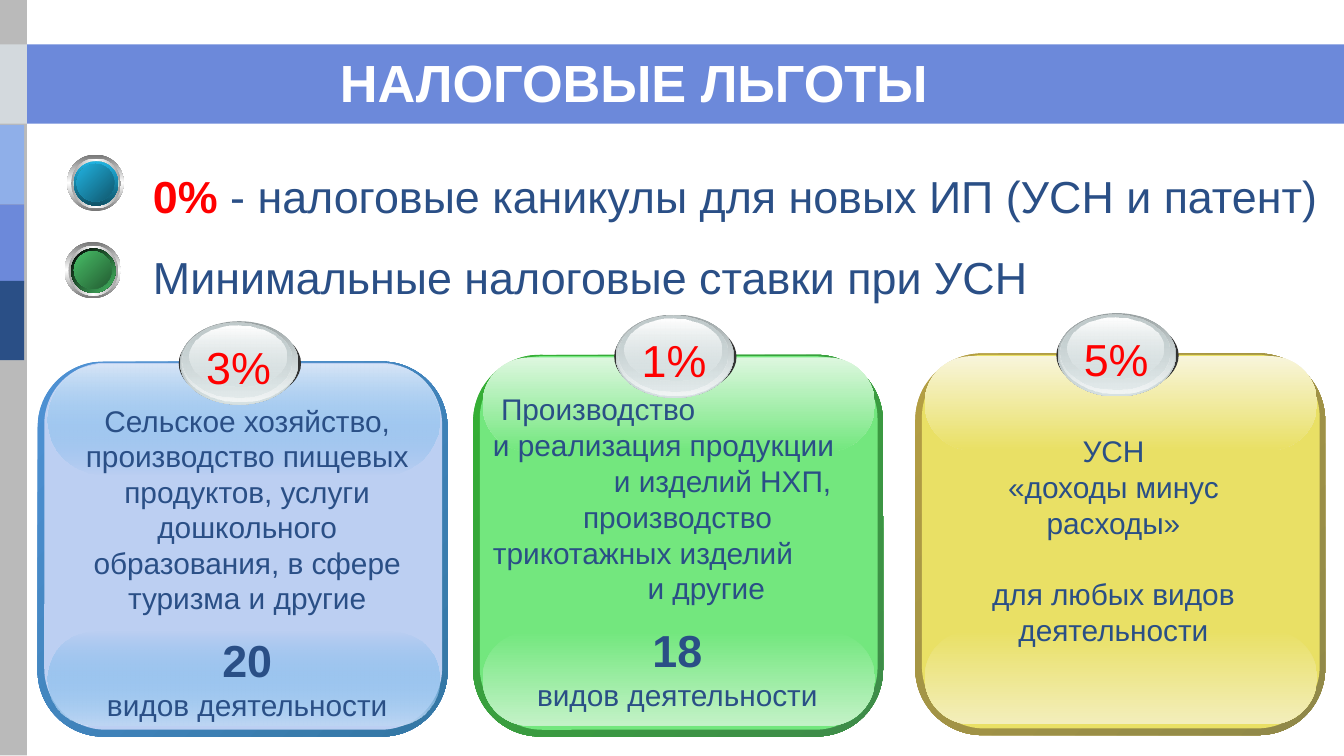
from lxml.etree import SubElement
from pptx import Presentation
from pptx.dml.color import RGBColor
from pptx.enum.shapes import MSO_SHAPE
from pptx.enum.text import MSO_ANCHOR, MSO_AUTO_SIZE, PP_ALIGN
from pptx.oxml.ns import qn
from pptx.util import Inches, Pt

NAVY, RED, WHITE = "2A4F86", "FF0000", "FFFFFF"
RECT, ROUND, OVAL = MSO_SHAPE.RECTANGLE, MSO_SHAPE.ROUNDED_RECTANGLE, MSO_SHAPE.OVAL

# 16:9 slide
prs = Presentation()
prs.slide_width, prs.slide_height = Inches(10), Inches(10 * 9 / 16)
slide = prs.slides.add_slide(prs.slide_layouts[5])


def add_filled(kind, x, y, w, h, colours, angle=90, corner=None):
    """Add a shape; colours holds one hex, or several as "hex" or "hex/opacity %"."""
    shape = slide.shapes.add_shape(kind, Inches(x), Inches(y), Inches(w), Inches(h))
    shape.shadow.inherit = False
    shape.line.fill.background()
    if corner is not None:
        shape.adjustments[0] = corner
    colours = colours.split()
    if len(colours) == 1:
        shape.fill.solid()
        shape.fill.fore_color.rgb = RGBColor.from_string(colours[0])
        return
    shape.fill.gradient()
    shape.fill.gradient_angle = (360 - angle) % 360
    stops = shape.element.spPr.find(qn("a:gradFill")).find(qn("a:gsLst"))
    for old_stop in list(stops):
        stops.remove(old_stop)
    for i, colour in enumerate(colours):
        value, _, opacity = colour.partition("/")
        stop = SubElement(stops, qn("a:gs"), pos=str(100000 * i // (len(colours) - 1)))
        tint = SubElement(stop, qn("a:srgbClr"), val=value)
        if opacity:
            SubElement(tint, qn("a:alpha"), val=str(int(opacity) * 1000))


def add_run(paragraph, text, size, colour=NAVY, bold=False):
    run = paragraph.add_run()
    run.text = text
    run.font.name, run.font.size, run.font.bold = "Arial", Pt(size), bold
    run.font.color.rgb = RGBColor.from_string(colour)


# Title band and left strip
add_filled(RECT, 0, 0.33, 10, 0.59, "6C89DA")
add_filled(RECT, -0.01, 0, 0.21, 5.62, "BABABA")
for x, y, colour in [(0, 0.33, "D3D9DD"), (-0.02, 0.93, "8FAFE9"),
                     (-0.02, 1.52, "6C89DA"), (-0.02, 2.09, NAVY)]:
    add_filled(RECT, x, y, 0.2, 0.59, colour)

# Title, brought in front of the band
title = slide.shapes.title
title.left, title.top, title.width, title.height = map(Inches, (0.34, 0.38, 8.75, 0.46))
title.text_frame.auto_size = MSO_AUTO_SIZE.NONE
title.text_frame.vertical_anchor = MSO_ANCHOR.MIDDLE
title.text_frame.paragraphs[0].alignment = PP_ALIGN.CENTER
add_run(title.text_frame.paragraphs[0], "НАЛОГОВЫЕ ЛЬГОТЫ", 28, WHITE, True)
slide.shapes._spTree.append(title.element)

# Two main points
points = slide.shapes.add_textbox(Inches(0.31), Inches(1.01), Inches(9.69), Inches(2.8)).text_frame
points.word_wrap = True
holidays, rates = points.paragraphs[0], points.add_paragraph()
for point in (holidays, rates):
    point.line_spacing = 1.5
    point._p.get_or_add_pPr().set("marL", str(Inches(0.73)))
add_run(holidays, "0% ", 24, RED, True)
add_run(holidays, "- налоговые каникулы для новых ИП (УСН и патент)", 24)
add_run(rates, "Минимальные налоговые ставки при УСН", 24)

# Round buttons beside the points: inset, size, colours, angle
rings = [(0, 0.42, "767676 FFFFFF 767676", 90),
         (0.03, 0.37, "A2A2A2 FFFFFF A2A2A2", 0),
         (0.05, 0.33, "FFFFFF 57ABA3 FFFFFF", 45)]
for x, y, rim, rim_angle, face in [(0.5, 1.15, "21B3E1 0F5368", 90, "21B3E1 10576D"),
                                   (0.48, 1.8, "000000 48BE67", 45, "48BE67 235C32")]:
    for inset, size, colours, angle in rings + [(0.05, 0.33, rim, rim_angle),
                                                (0.07, 0.28, "43837D 57ABA3 43837D", 315),
                                                (0.07, 0.28, face, 45)]:
        add_filled(OVAL, x + inset, y + inset, size, size, colours, angle)

# Rate cards: place, frame, body, lower and upper gloss, upper gloss height
cards = [
    (0.28, 2.69, 2.79, "4E91D4 3477A4", "BCCFF2", "3CA1E6/0 BDD6F3", "D7E5F7 3CA1E6/0", 0.82, "3%"),
    (3.52, 2.64, 2.84, "34B034 3F8B4A", "73E77E", "73E77E C3F2C7", "DDF7DF 73E77E", 0.7, "1%"),
    (6.81, 2.63, 2.84, "B59F43 8F8849", "E9E065", "E9E065 F3EEBB", "F8F5DB E9E065", 0.7, "5%"),
]
badge_layers = [(1.05, -0.27, 0.91, 0.57, "333333"),
                (1.06, -0.3, 0.88, 0.62, "99A1A2 D6E1E2"),
                (1.07, -0.3, 0.86, 0.6, "D6E1E2/0 F2F5F5"),
                (1.08, -0.29, 0.81, 0.56, "C1CBCC D6E1E2/48"),
                (1.13, -0.27, 0.72, 0.46, "FFFFFF D6E1E2/38")]
for x, y, h, frame, body, lower, upper, upper_h, rate in cards:
    add_filled(ROUND, x, y, 3.05, h, frame, 45, 0.175)
    add_filled(ROUND, x + 0.05, y + 0.01, 2.96, h - 0.06, body, corner=0.167)
    add_filled(ROUND, x + 0.07, y + h - 0.78, 2.92, 0.7, lower, corner=0.5)
    add_filled(ROUND, x + 0.07, y + 0.02, 2.92, upper_h, upper, corner=0.5)
    for dx, dy, badge_w, badge_h, colours in badge_layers:
        add_filled(OVAL, x + dx, y + dy, badge_w, badge_h, colours)
    badge = slide.shapes.add_textbox(Inches(x + 1.15), Inches(y - 0.21), Inches(0.69), Inches(0.5))
    badge.text_frame.word_wrap = False
    badge.text_frame.paragraphs[0].alignment = PP_ALIGN.CENTER
    add_run(badge.text_frame.paragraphs[0], rate, 24, RED)

# Card texts: box, line spacing, then text, size, space before, left indent (None = centred)
card_texts = [
    ((0.49, 2.95, 2.7, 2.5), Pt(19), [
        ("Сельское хозяйство, производство пищевых продуктов, услуги дошкольного "
         "образования, в сфере туризма и другие", 16, 0, None),
        ("20", 24, 19, None),
        ("видов деятельности", 16, 0, None)]),
    ((3.57, 2.86, 2.94, 2.52), 1.0, [
        ("Производство", 16, 0, 0.06),
        ("и реализация продукции", 16, 0, 0),
        ("и изделий НХП,", 16, 0, 0.9),
        ("производство", 16, 0, 0.67),
        ("трикотажных изделий", 16, 0, 0),
        ("и другие", 16, 0, 1.15),
        ("18", 24, 9, None),
        ("видов деятельности", 16, 0, None)]),
    ((6.92, 3.17, 2.73, 1.72), 1.0, [
        ("УСН", 16, 0, None),
        ("«доходы минус расходы»", 16, 0, None),
        ("для любых видов деятельности", 16, 19, None)]),
]
for box, spacing, lines in card_texts:
    card_text = slide.shapes.add_textbox(*map(Inches, box)).text_frame
    card_text.word_wrap = True
    for i, (text, size, before, indent) in enumerate(lines):
        line = card_text.add_paragraph() if i else card_text.paragraphs[0]
        line.line_spacing = spacing
        if before:
            line.space_before = Pt(before)
        if indent is None:
            line.alignment = PP_ALIGN.CENTER
        else:
            line._p.get_or_add_pPr().set("marL", str(Inches(indent)))
        add_run(line, text, size, bold=size == 24)

prs.save("out.pptx")
